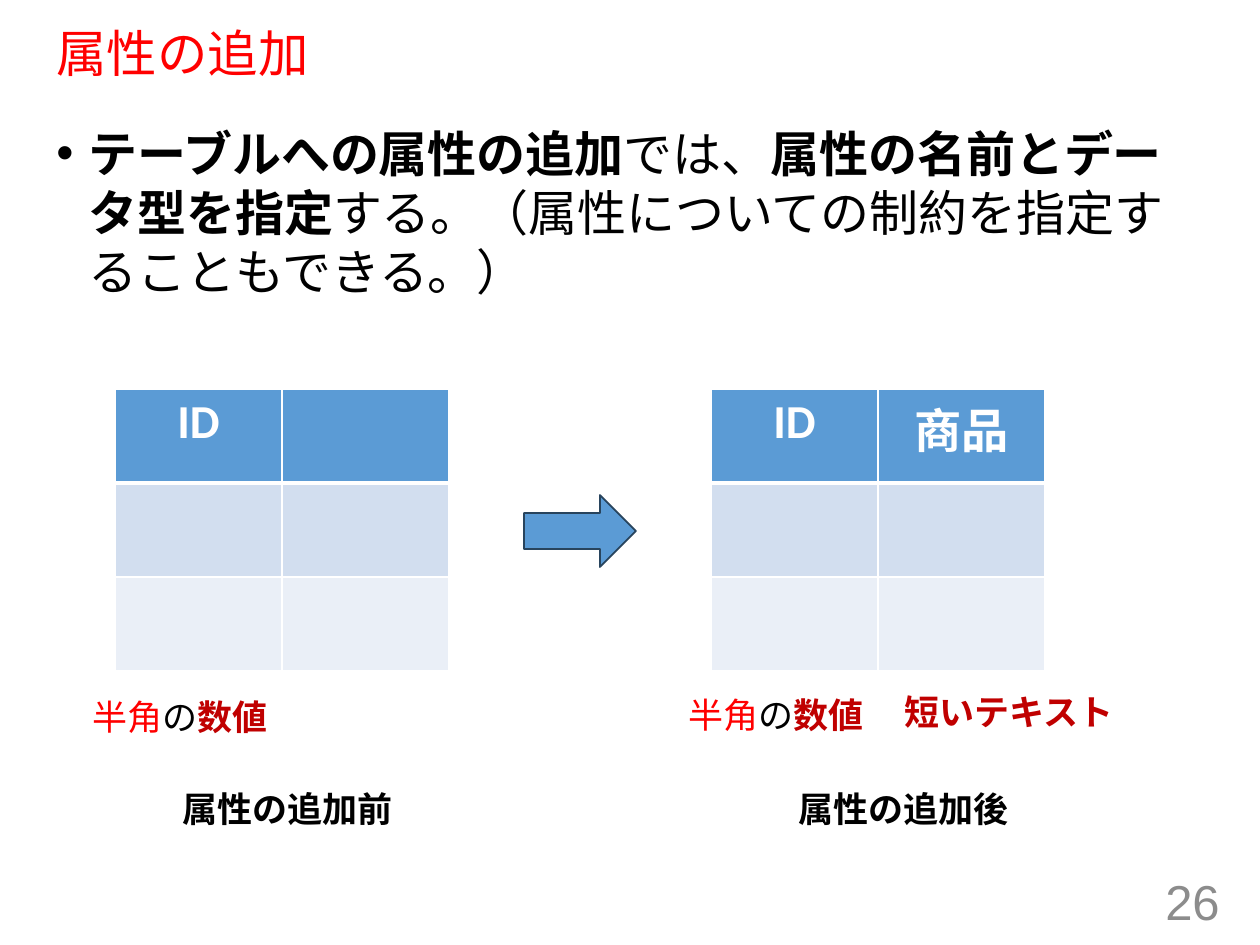
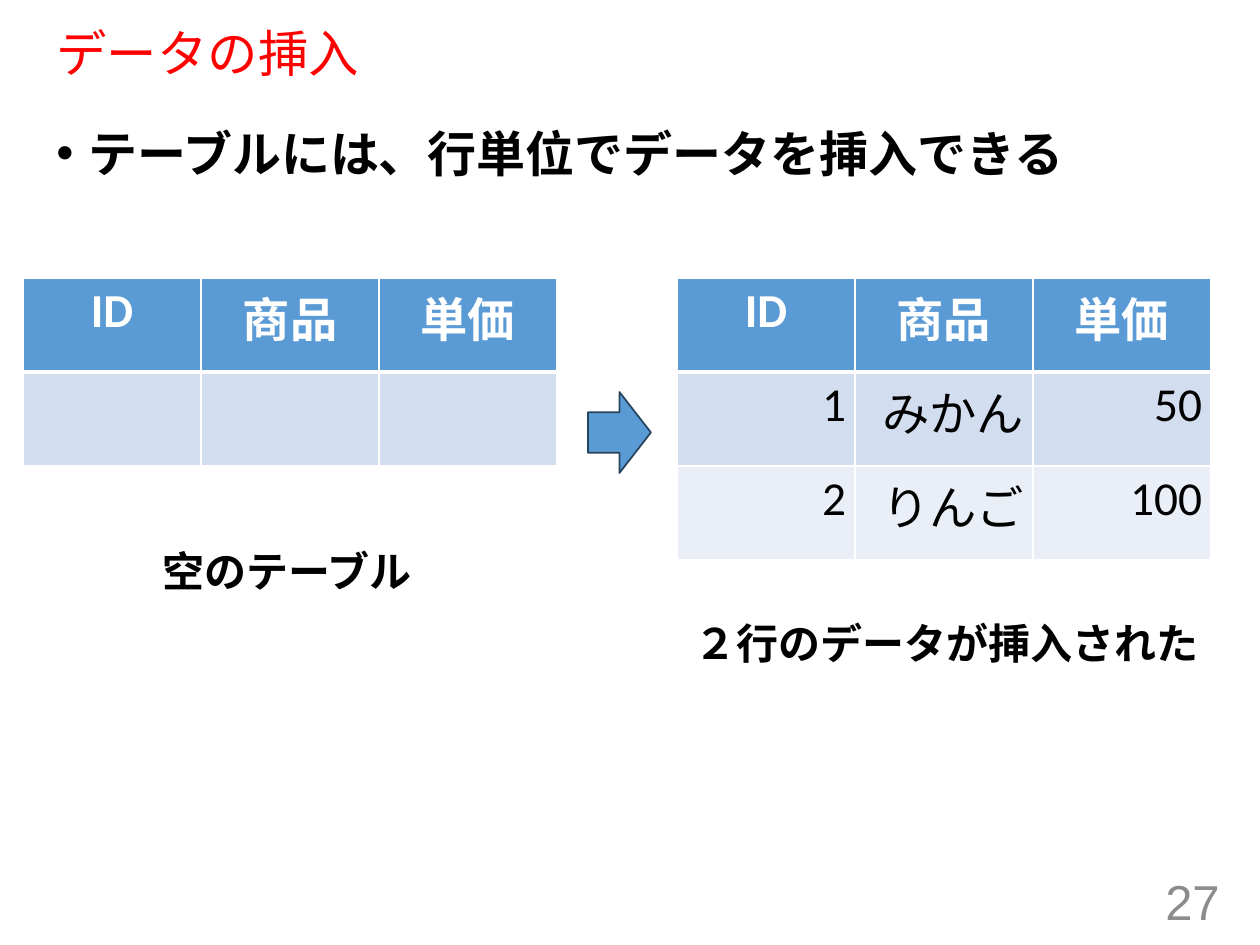
import dataclasses

import lxml.etree
import pptx
import pptx.dml.color
import pptx.enum.shapes
import pptx.enum.text
import pptx.oxml.ns
import pptx.util

ALIGN = pptx.enum.text.PP_ALIGN
ANCHOR = pptx.enum.text.MSO_ANCHOR
EMU_PER_PX = 914400 / 126


@dataclasses.dataclass(frozen=True)
class Theme:
    # Colours
    title: str = "FF0000"
    text: str = "000000"
    page: str = "8C8C8C"
    hint: str = "FF0000"
    type_name: str = "C00000"
    accent: str = "5B9BD5"
    arrow_edge: str = "28445D"
    white: str = "FFFFFF"
    bands: tuple = ("D2DEEF", "EAEFF7")
    # Fonts and sizes in points
    heading_font: str = "Arial"
    label_font: str = "Calibri"
    title_size: float = 28.8
    body_size: float = 28
    body_leading: float = 33.7
    cell_size: float = 27
    caption_size: float = 24
    label_size: float = 20


THEME = Theme()

# Boxes shared by the slides, in px: left, top, width, height
SLIDE_SIZE = (1260, 945)
TITLE_BOX = (44, 24, 1166, 64)
BODY_BOX = (44, 117, 1166, 735)
PAGE_BOX = (949, 876, 283, 50)
ROW_HEIGHT = 94


def px(length):
    return pptx.util.Emu(round(length * EMU_PER_PX))


def rgb(value):
    return pptx.dml.color.RGBColor.from_string(value)


def child(parent, tag, **attributes):
    return lxml.etree.SubElement(parent, pptx.oxml.ns.qn(tag), **attributes)


def write(frame, *runs, font=THEME.label_font, size=THEME.label_size,
          color=THEME.text, bold=False, align=ALIGN.LEFT, spacing=None,
          east_asian=True):
    """Fill a frame with runs: plain strings, or (string, format changes)."""
    paragraph = frame.paragraphs[0]
    paragraph.alignment = align
    if spacing:
        paragraph.line_spacing = spacing
    for item in runs:
        words, changes = (item, {}) if isinstance(item, str) else item
        run = paragraph.add_run()
        run.text = words
        run.font.name = font
        run.font.size = pptx.util.Pt(size)
        run.font.bold = changes.get("bold", bold)
        run.font.color.rgb = rgb(changes.get("color", color))
        if east_asian:
            child(run.font._element, "a:ea", typeface=font)
    return paragraph


def text_box(slide, box, *runs, wrap=True, anchor=ANCHOR.TOP, **style):
    frame = slide.shapes.add_textbox(*map(px, box)).text_frame
    frame.word_wrap = wrap
    frame.vertical_anchor = anchor
    if not wrap:
        frame.auto_size = pptx.enum.text.MSO_AUTO_SIZE.SHAPE_TO_FIT_TEXT
    return write(frame, *runs, **style)


def label(slide, box, *runs, **style):
    text_box(slide, box, *runs, wrap=False, **style)


def bullet(slide, box, *runs):
    paragraph = text_box(slide, box, *runs, font=THEME.heading_font,
                         size=THEME.body_size, bold=True,
                         spacing=pptx.util.Pt(THEME.body_leading))
    properties = paragraph._p.get_or_add_pPr()
    indent = px(32)
    properties.set("marL", str(indent))
    properties.set("indent", str(-indent))
    child(properties, "a:buFont", typeface=THEME.heading_font)
    child(properties, "a:buChar", char="•")


def border(cell, row):
    """White rules, thicker beneath the header row."""
    widths = {"L": 1, "R": 1, "T": 3 if row == 1 else 1, "B": 3 if row == 0 else 1}
    properties = cell._tc.get_or_add_tcPr()
    for position, (side, width) in enumerate(widths.items()):
        line = lxml.etree.Element(pptx.oxml.ns.qn(f"a:ln{side}"),
                                  w=str(pptx.util.Pt(width)))
        child(child(line, "a:solidFill"), "a:srgbClr", val=THEME.white)
        properties.insert(position, line)


def data_table(slide, left, top, column_width, rows):
    columns = len(rows[0])
    table = slide.shapes.add_table(
        len(rows), columns, px(left), px(top),
        px(column_width * columns), px(ROW_HEIGHT * len(rows))).table
    for column in table.columns:
        column.width = px(column_width)
    for r, values in enumerate(rows):
        table.rows[r].height = px(ROW_HEIGHT)
        header = r == 0
        for c, value in enumerate(values):
            cell = table.cell(r, c)
            cell.margin_left = cell.margin_right = px(9)
            cell.margin_top = cell.margin_bottom = px(5)
            cell.fill.solid()
            cell.fill.fore_color.rgb = rgb(
                THEME.accent if header else THEME.bands[(r - 1) % 2])
            border(cell, r)
            if value:
                write(cell.text_frame, value, size=THEME.cell_size, bold=header,
                      color=THEME.white if header else THEME.text,
                      align=ALIGN.CENTER if header else ALIGN.RIGHT,
                      east_asian=False)


def change_arrow(slide, box):
    arrow = slide.shapes.add_shape(
        pptx.enum.shapes.MSO_SHAPE.RIGHT_ARROW, *map(px, box))
    arrow.shadow.inherit = False
    arrow.fill.solid()
    arrow.fill.fore_color.rgb = rgb(THEME.accent)
    arrow.line.color.rgb = rgb(THEME.arrow_edge)
    arrow.line.width = pptx.util.Pt(1)


def base_slide(deck, title, page, *message):
    """Title, bulleted message and page number common to every slide."""
    slide = deck.slides.add_slide(deck.slide_layouts[6])
    text_box(slide, TITLE_BOX, title, font=THEME.heading_font,
             size=THEME.title_size, color=THEME.title,
             anchor=ANCHOR.MIDDLE, spacing=0.9)
    bullet(slide, BODY_BOX, *message)
    text_box(slide, PAGE_BOX, str(page), font=THEME.heading_font,
             size=THEME.body_size, color=THEME.page,
             anchor=ANCHOR.MIDDLE, align=ALIGN.RIGHT)
    return slide


def attribute_state(slide, left, top, headers, type_top, caption, caption_left):
    """A two-column table with its ID type and caption underneath."""
    blank = ("", "")
    data_table(slide, left, top, 167, [headers, blank, blank])
    label(slide, (left - 35, top + type_top, 202, 55),
          ("半角", {"color": THEME.hint}), "の",
          ("数値", {"color": THEME.type_name, "bold": True}))
    label(slide, (left + caption_left, top + 392, 237, 55), caption, bold=True)


def attribute_slide(deck):
    plain = {"bold": False}
    slide = base_slide(
        deck, "属性の追加", 26,
        "テーブルへの属性の追加", ("では、", plain),
        "属性の名前とデータ型を指定",
        ("する。（属性についての制約を指定することもできる。）", plain))
    # Before and after
    attribute_state(slide, 115, 389, ("ID", ""), 300, "属性の追加前", 55)
    attribute_state(slide, 711, 389, ("ID", "商品"), 298, "属性の追加後", 75)
    label(slide, (892, 684, 237, 55), "短いテキスト",
          color=THEME.type_name, bold=True)
    change_arrow(slide, (524, 495, 112, 72))


def insertion_slide(deck):
    slide = base_slide(deck, "データの挿入", 27,
                       "テーブルには、行単位でデータを挿入できる")
    headers = ("ID", "商品", "単価")
    caption = {"size": THEME.caption_size, "bold": True}
    # Empty table
    data_table(slide, 23, 278, 178, [headers, ("", "", "")])
    label(slide, (150, 539, 280, 63), "空のテーブル", **caption)
    # Table with inserted rows
    data_table(slide, 677, 278, 178,
               [headers, ("1", "みかん", "50"), ("2", "りんご", "100")])
    label(slide, (682, 611, 534, 63), "２行のデータが挿入された", **caption)
    change_arrow(slide, (588, 392, 63, 81))


def main():
    deck = pptx.Presentation()
    deck.slide_width, deck.slide_height = map(px, SLIDE_SIZE)
    attribute_slide(deck)
    insertion_slide(deck)
    deck.save("out.pptx")


if __name__ == "__main__":
    main()
